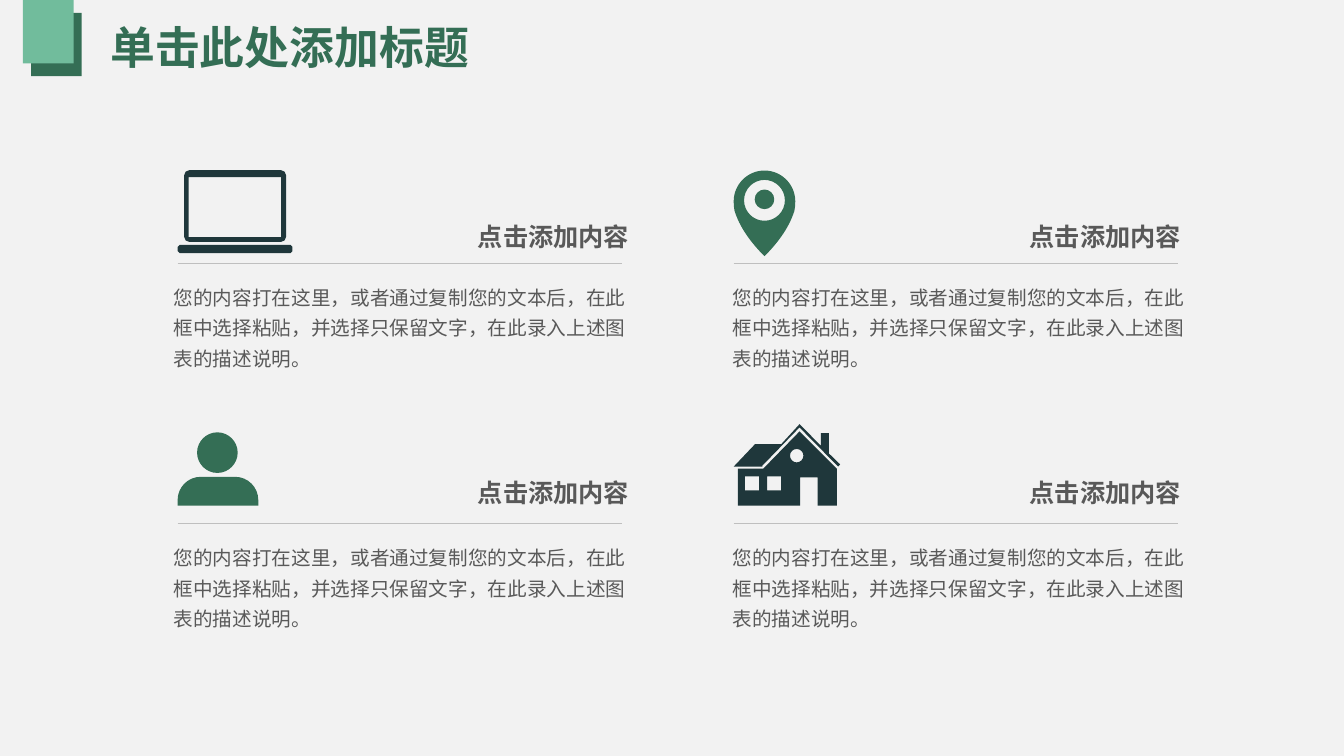
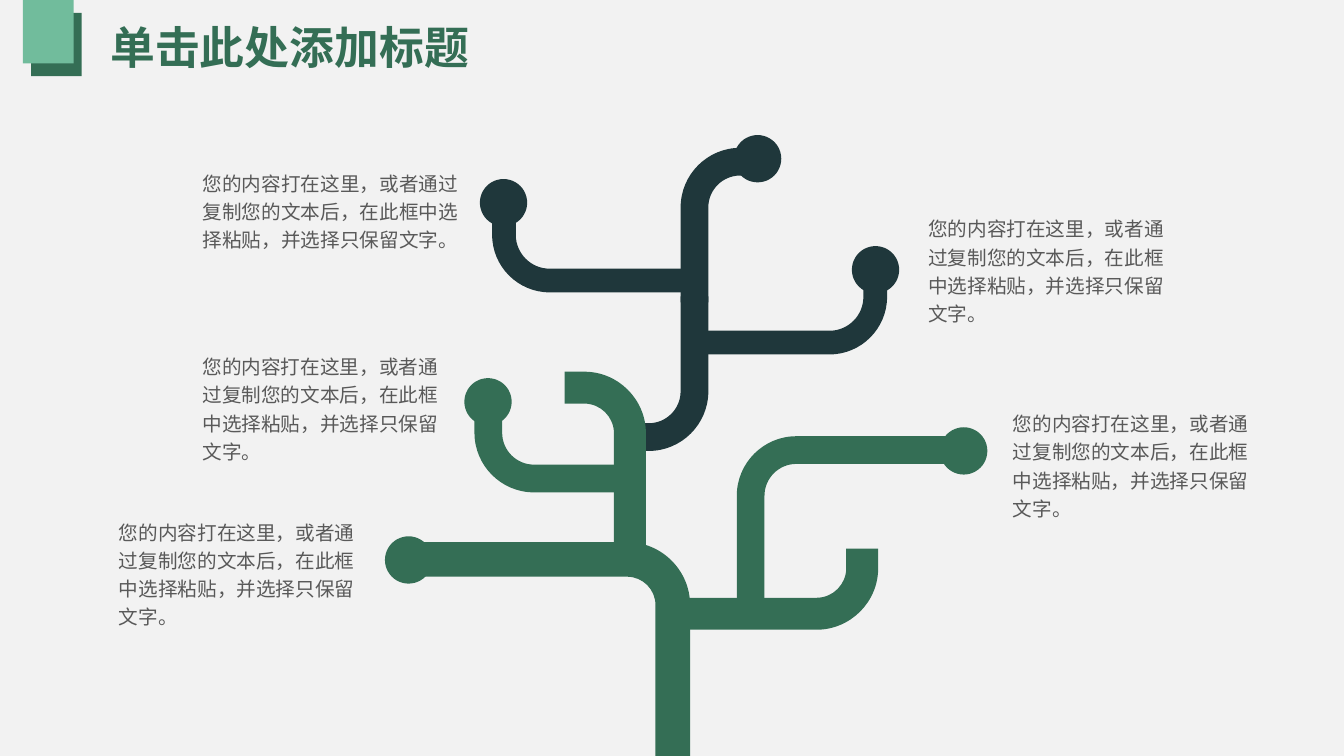
from dataclasses import dataclass
from math import copysign, cos, radians, sin
from typing import NamedTuple

from lxml import etree
from pptx import Presentation
from pptx.dml.color import RGBColor
from pptx.enum import shapes, text
from pptx.oxml import ns
from pptx.util import Pt

PAPER = RGBColor(0xF2, 0xF2, 0xF2)
GREEN = RGBColor(0x34, 0x6E, 0x55)
MINT = RGBColor(0x71, 0xBC, 0x9C)
NAVY = RGBColor(0x1F, 0x37, 0x3B)
GREY = RGBColor(0x59, 0x59, 0x59)
RULE_GREY = RGBColor(0xBF, 0xBF, 0xBF)
FONT = "Noto Sans CJK SC"

TITLE = "单击此处添加标题"
HEADING = "点击添加内容"
PANEL_TEXT = ("您的内容打在这里，或者通过复制您的文本后，在此框中选择粘贴，"
              "并选择只保留文字，在此录入上述图表的描述说明。")
BRANCH_TEXT = "您的内容打在这里，或者通过复制您的文本后，在此框中选择粘贴，并选择只保留文字。"

RULE_WIDTH = 317.2
BEND_RADIUS = 32.6
DOT_SIZE = 33.8
QUARTER_HANDLE = 0.55


class Point(NamedTuple):
    x: float
    y: float


class Knot(NamedTuple):
    """A corner, or the end of a curve when it has two handles."""
    x: float
    y: float
    handles: tuple[Point, ...] = ()


class Box(NamedTuple):
    left: float
    top: float
    width: float
    height: float


Outline = list[Knot]


@dataclass
class Icon:
    """Outlines relative to the left end of a panel's rule; inner ones are holes."""
    outlines: list[Outline]
    colour: RGBColor


@dataclass
class Panel:
    left: float
    rule_top: float
    heading: Point
    body: Point
    icon: Icon


@dataclass
class Branch:
    """Centre line that leaves start sideways and bends once up or down."""
    start: Point
    bend_x: float
    end_y: float
    width: float
    colour: RGBColor


@dataclass
class Dot:
    centre: Point
    colour: RGBColor


def corners(*pairs: tuple[float, float]) -> Outline:
    return [Knot(*pair) for pair in pairs]


def arc(x: float, y: float, radius: float, first: float, quarters: int) -> Outline:
    """Quarter turns about x, y from an angle in degrees; positive runs clockwise."""
    turn = int(copysign(1, quarters))

    def spot(degrees: float, handle: float = 0) -> Point:
        a = radians(degrees)
        return Point(x + radius * (cos(a) - handle * sin(a)),
                     y + radius * (sin(a) + handle * cos(a)))

    knots = [Knot(*spot(first))]
    for i in range(abs(quarters)):
        begin, end = first + 90 * turn * i, first + 90 * turn * (i + 1)
        handles = (spot(begin, QUARTER_HANDLE * turn), spot(end, -QUARTER_HANDLE * turn))
        knots.append(Knot(*spot(end), handles))
    return knots


def circle(x: float, y: float, radius: float) -> Outline:
    return arc(x, y, radius, 0, 4)


def rectangle(left: float, top: float, right: float, bottom: float) -> Outline:
    return corners((left, top), (right, top), (right, bottom), (left, bottom))


def rounded(left: float, top: float, right: float, bottom: float, radius: float) -> Outline:
    centres = rectangle(left + radius, top + radius, right - radius, bottom - radius)
    return [knot for i, centre in enumerate(centres)
            for knot in arc(centre.x, centre.y, radius, 180 + 90 * i, 1)]


LAPTOP = Icon([
    rounded(0, -13, 82, -7.2, 1.4),
    rounded(4.7, -66.4, 77.4, -15.2, 3.5),
    rectangle(7.9, -61.4, 73.9, -18.5),
], NAVY)
PIN = Icon([
    arc(22, -44.2, 22, 180, 2) + [
        Knot(43.4, -37.4, (Point(44, -42), Point(43.9, -40))),
        Knot(22, -5, (Point(41, -30), Point(36, -19))),
        Knot(0.6, -37.4, (Point(8, -19), Point(3, -30))),
        Knot(0, -44.2, (Point(0.1, -40), Point(0, -42))),
    ],
    circle(22, -44.9, 14.6),
    circle(22, -45.6, 7),
], GREEN)
PERSON = Icon([
    circle(28.4, -50.4, 14.5),
    arc(16.5, -16.6, 16.5, 180, 1) + arc(41.1, -16.6, 16.5, 270, 1)
    + corners((57.6, -12.6), (0, -12.6)),
], GREEN)
HOUSE = Icon([
    corners((73.6, -38.9), (47, -65.5), (21.1, -38.9), (3, -38.9), (3, -12.5), (47.5, -12.5),
            (47.5, -32.6), (60, -32.6), (60, -12.5), (73.6, -12.5)),
    rectangle(8, -33.4, 18.2, -23.4),
    rectangle(23.8, -33.4, 33.8, -23.4),
    circle(45, -48.2, 4.8),
    corners((76, -42), (74.6, -40.4), (47, -68.4), (20.4, -41), (20.4, -40.4), (0, -40.4),
            (15.3, -56.5), (34, -56.5), (47, -70.7), (62.2, -55.4), (62.2, -64.3),
            (68, -64.3), (68, -49.8)),
], NAVY)

PANELS = [
    Panel(126.9, 188, Point(332.6, 154.1), Point(117, 195.4), LAPTOP),
    Panel(524.1, 188, Point(726.8, 154.1), Point(516.2, 195.4), PIN),
    Panel(126.9, 373.7, Point(332.6, 337), Point(117, 381.6), PERSON),
    Panel(524.1, 373.7, Point(726.8, 337), Point(516.2, 381.6), HOUSE),
]

BRANCHES = [
    Branch(Point(449.3, 312.2), 496.1, 211.7, 19.8, NAVY),
    Branch(Point(403.4, 276.9), 450, 400.3, 22.8, GREEN),
    Branch(Point(449.3, 341.8), 348.8, 295.2, 19.8, GREEN),
    Branch(Point(689.3, 321.5), 536.2, 442.1, 19.8, GREEN),
    Branch(Point(290.9, 399.6), 480.6, 540, 24.7, GREEN),
    Branch(Point(480.3, 438.4), 615.9, 391.9, 22.8, GREEN),
    Branch(Point(499.8, 244.7), 625.2, 198.7, 16.9, NAVY),
    Branch(Point(492.5, 200.4), 360, 154.1, 16.9, NAVY),
    Branch(Point(542.9, 115.5), 496.1, 216, 19.8, NAVY),
]
DOTS = [
    Dot(Point(348.6, 287), GREEN),
    Dot(Point(291.9, 400), GREEN),
    Dot(Point(688.4, 322.1), GREEN),
    Dot(Point(625.4, 192.7), NAVY),
    Dot(Point(359.7, 144.8), NAVY),
    Dot(Point(541.2, 113.4), NAVY),
]
BRANCH_NOTES = [
    Box(77.8, 365, 190.8, 88.6),
    Box(137.5, 246.7, 189.4, 88.6),
    Box(716.4, 287.5, 182.9, 88.6),
    Box(655.9, 148.3, 187.9, 88.6),
    Box(137.7, 115.9, 198.7, 68.4),
]


def paint(shape, colour: RGBColor) -> None:
    shape.shadow.inherit = False
    shape.fill.solid()
    shape.fill.fore_color.rgb = colour
    shape.line.fill.background()


def draw_shape(page, kind, box: Box, colour: RGBColor):
    shape = page.shapes.add_shape(kind, *map(Pt, box))
    paint(shape, colour)
    return shape


def draw_outlines(page, outlines: list[Outline], colour: RGBColor,
                  origin: Point = Point(0, 0)) -> None:
    """Draw the outlines as one freeform, then bend the sides that have handles."""
    def place(point: Point | Knot) -> tuple[int, int]:
        return Pt(origin.x + point.x), Pt(origin.y + point.y)

    builder = page.shapes.build_freeform(*place(outlines[0][0]))
    for i, outline in enumerate(outlines):
        if i:
            builder.move_to(*place(outline[0]))
        builder.add_line_segments([place(knot) for knot in outline[1:]], close=True)
    shape = builder.convert_to_shape()
    paint(shape, colour)

    sides = list(shape.element.iter(ns.qn("a:lnTo")))
    ends = [knot for outline in outlines for knot in outline[1:]]
    for side, knot in zip(sides, ends):
        if knot.handles:
            side.tag = ns.qn("a:cubicBezTo")
            for i, handle in enumerate(knot.handles):
                x, y = place(handle)
                point = etree.Element(ns.qn("a:pt"), x=str(x - shape.left), y=str(y - shape.top))
                side.insert(i, point)


def write(frame, words: str, colour: RGBColor, font: dict, para_format: dict,
          frame_format: dict) -> None:
    para = frame.paragraphs[0]
    span = para.add_run()
    span.text = words
    for target, values in ((frame, frame_format), (para, para_format),
                           (span.font, {"name": FONT, **font})):
        for name, value in values.items():
            setattr(target, name, value)
    span.font.color.rgb = colour
    east_asian = etree.SubElement(span._r.get_or_add_rPr(), ns.qn("a:ea"))
    east_asian.set("typeface", FONT)


def add_text(page, box: Box, words: str, font: dict, para_format: dict, **frame_format) -> None:
    frame = page.shapes.add_textbox(*map(Pt, box)).text_frame
    write(frame, words, GREY, font, para_format,
          {"word_wrap": True, "auto_size": text.MSO_AUTO_SIZE.SHAPE_TO_FIT_TEXT, **frame_format})


def draw_rule(page, left: float, top: float) -> None:
    rule = page.shapes.add_connector(shapes.MSO_CONNECTOR.STRAIGHT,
                                     Pt(left), Pt(top), Pt(left + RULE_WIDTH), Pt(top))
    rule.line.color.rgb = RULE_GREY
    rule.line.width = Pt(0.5)
    etree.SubElement(rule.element.spPr, ns.qn("a:effectLst"))


def branch_outline(branch: Branch) -> Outline:
    start, bend_x, end_y = branch.start, branch.bend_x, branch.end_y
    across = int(copysign(1, bend_x - start.x))
    down = int(copysign(1, end_y - start.y))
    x, y = bend_x - across * BEND_RADIUS, start.y + down * BEND_RADIUS
    first, turn = -90 * down, across * down
    outer, inner = BEND_RADIUS + branch.width / 2, BEND_RADIUS - branch.width / 2
    return [
        Knot(start.x, y - down * outer),
        *arc(x, y, outer, first, turn),
        Knot(x + across * outer, end_y),
        Knot(x + across * inner, end_y),
        *arc(x, y, inner, first + 90 * turn, -turn),
        Knot(start.x, y - down * inner),
    ]


def add_page(deck):
    page = deck.slides.add_slide(deck.slide_layouts[5])
    title = page.shapes.title
    for name, value in zip(Box._fields, (71.6, 9.4, 828, 52.6)):
        setattr(title, name, Pt(value))
    write(title.text_frame, TITLE, GREEN, {"size": Pt(32), "bold": True},
          {"alignment": text.PP_ALIGN.LEFT, "line_spacing": 0.9},
          {"vertical_anchor": text.MSO_ANCHOR.MIDDLE, "word_wrap": True,
           "auto_size": text.MSO_AUTO_SIZE.NONE})
    return page


def decorate_layout(page) -> None:
    """Give the page's layout the background and corner blocks all pages share."""
    layout = page.slide_layout
    layout.background.fill.solid()
    layout.background.fill.fore_color.rgb = PAPER
    for box, colour in ((Box(22.2, 9.2, 36.2, 45.2), GREEN), (Box(16.4, 0, 36.2, 45.2), MINT)):
        block = draw_shape(page, shapes.MSO_SHAPE.RECTANGLE, box, colour)
        layout.shapes.element.append(block.element)


def draw_panel(page, panel: Panel) -> None:
    draw_outlines(page, panel.icon.outlines, panel.icon.colour, Point(panel.left, panel.rule_top))
    draw_rule(page, panel.left, panel.rule_top)
    add_text(page, Box(*panel.heading, 123.8, 29.1), HEADING, {"size": Pt(18), "bold": True},
             {"alignment": text.PP_ALIGN.RIGHT},
             word_wrap=False, vertical_anchor=text.MSO_ANCHOR.MIDDLE)
    add_text(page, Box(*panel.body, 338.4, 73.4), PANEL_TEXT, {"size": Pt(14)},
             {"line_spacing": 1.3})


def draw_tree(page) -> None:
    for branch in BRANCHES:
        draw_outlines(page, [branch_outline(branch)], branch.colour)
    for dot in DOTS:
        box = Box(dot.centre.x - DOT_SIZE / 2, dot.centre.y - DOT_SIZE / 2, DOT_SIZE, DOT_SIZE)
        draw_shape(page, shapes.MSO_SHAPE.OVAL, box, dot.colour)
    for box in BRANCH_NOTES:
        add_text(page, box, BRANCH_TEXT, {"size": Pt(14)}, {"line_spacing": 1.2})


def main() -> None:
    deck = Presentation()
    deck.slide_width, deck.slide_height = Pt(960), Pt(540)
    panel_page, tree_page = add_page(deck), add_page(deck)
    decorate_layout(panel_page)
    for panel in PANELS:
        draw_panel(panel_page, panel)
    draw_tree(tree_page)
    deck.save("out.pptx")


if __name__ == "__main__":
    main()
